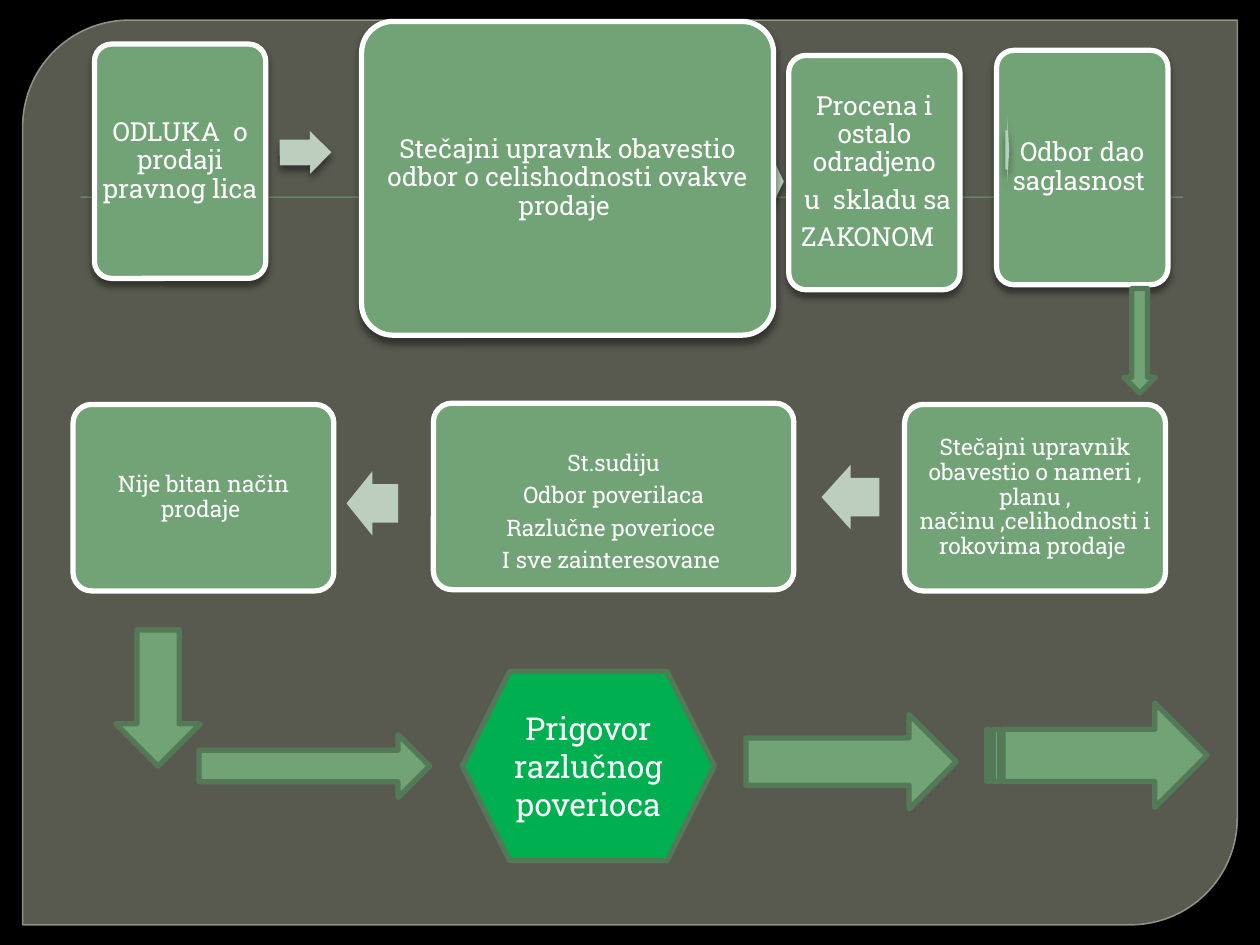
from dataclasses import dataclass

from lxml.etree import SubElement
from pptx import Presentation
from pptx.dml.color import RGBColor
from pptx.enum.shapes import MSO_SHAPE
from pptx.enum.text import MSO_ANCHOR, PP_ALIGN
from pptx.oxml.ns import qn
from pptx.util import Inches, Pt

BLACK = RGBColor(0x00, 0x00, 0x00)
WHITE = RGBColor(0xFF, 0xFF, 0xFF)
PANEL = RGBColor(0x88, 0x8B, 0x7B)
PANEL_EDGE = RGBColor(0x9D, 0xA0, 0x90)
SAGE = RGBColor(0x72, 0xA3, 0x76)
PALE_SAGE = RGBColor(0xBC, 0xCE, 0xBD)
DARK_SAGE = RGBColor(0x54, 0x79, 0x57)
BRIGHT_GREEN = RGBColor(0x00, 0xB0, 0x50)
FONT = "Roboto Slab"
CARD_INSET = 0.02


@dataclass
class Box:
    left: float
    top: float
    width: float
    height: float


@dataclass
class Card:
    box: Box
    lines: list[str]
    size: int = 15
    shadow: bool = True
    top_inset: float = CARD_INSET


@dataclass
class SmallArrow:
    box: Box
    rotation: float = 0
    shadow: bool = True


@dataclass
class BlockArrow:
    kind: MSO_SHAPE
    box: Box


def add_shape(s, kind: MSO_SHAPE, box: Box, fill: RGBColor,
              line: RGBColor | None = None, weight: float = 3):
    sp = s.shapes.add_shape(kind, Inches(box.left), Inches(box.top),
                            Inches(box.width), Inches(box.height))
    sp.shadow.inherit = False
    sp.fill.solid()
    sp.fill.fore_color.rgb = fill
    if line is None:
        sp.line.fill.background()
    else:
        sp.line.color.rgb = line
        sp.line.width = Pt(weight)
    return sp


def set_alpha(color, percent: int) -> None:
    SubElement(color, qn("a:alpha"), val=str(percent * 1000))


def add_shadow(sp, blur: float = 4, distance: float = 3, percent: int = 43) -> None:
    effects = sp._element.spPr.find(qn("a:effectLst"))
    shadow = SubElement(effects, qn("a:outerShdw"), blurRad=str(Pt(blur)),
                        dist=str(Pt(distance)), dir="5400000", rotWithShape="0")
    set_alpha(SubElement(shadow, qn("a:srgbClr"), val=str(BLACK)), percent)


def write_text(sp, lines: list[str], size: int):
    tf = sp.text_frame
    tf.word_wrap = True
    tf.vertical_anchor = MSO_ANCHOR.MIDDLE
    for i, line in enumerate(lines):
        p = tf.paragraphs[0] if i == 0 else tf.add_paragraph()
        p.alignment = PP_ALIGN.CENTER
        r = p.add_run()
        r.text = line
        r.font.name = FONT
        r.font.size = Pt(size)
        r.font.color.rgb = WHITE
    return tf


def draw_card(s, card: Card) -> None:
    sp = add_shape(s, MSO_SHAPE.ROUNDED_RECTANGLE, card.box, SAGE, WHITE)
    sp.adjustments[0] = 0.1
    if card.shadow:
        add_shadow(sp)
    tf = write_text(sp, card.lines, card.size)
    tf.margin_left = tf.margin_right = tf.margin_bottom = Inches(CARD_INSET)
    tf.margin_top = Inches(card.top_inset)
    for p in tf.paragraphs:
        p.line_spacing = 0.9
        p.space_after = Pt(round(card.size * 0.35, 1))


def draw_small_arrow(s, arrow: SmallArrow) -> None:
    sp = add_shape(s, MSO_SHAPE.RIGHT_ARROW, arrow.box, PALE_SAGE)
    sp.adjustments[0] = 0.6
    sp.adjustments[1] = 0.5
    sp.rotation = arrow.rotation
    if arrow.shadow:
        add_shadow(sp)


def draw_background(s) -> None:
    s.background.fill.solid()
    s.background.fill.fore_color.rgb = BLACK
    panel = add_shape(s, MSO_SHAPE.ROUND_2_DIAG_RECTANGLE,
                      Box(0.18, 0.16, 9.64, 7.18), PANEL, PANEL_EDGE, 0.87)
    panel.adjustments[0] = 0.118
    panel.adjustments[1] = 0
    fill_color, line_color = panel._element.spPr.iter(qn("a:srgbClr"))
    set_alpha(fill_color, 65)
    set_alpha(line_color, 88)
    rule = add_shape(s, MSO_SHAPE.RECTANGLE, Box(0.64, 1.56, 8.75, 0.01), SAGE)
    add_shadow(rule, 1, 1, 75)


FLOW = [
    Card(Box(7.91, 0.4, 1.36, 1.86), ["Odbor dao saglasnost "]),
    SmallArrow(Box(7.98, 0.93, 0.03, 0.52)),
    Card(Box(6.26, 0.44, 1.36, 1.86),
         ["Procena i ostalo odradjeno", " u  skladu sa ", "ZAKONOM  "]),
    SmallArrow(Box(6.03, 1.24, 0.19, 0.4)),
    Card(Box(0.75, 0.35, 1.36, 1.86), ["ODLUKA  o prodaji pravnog lica "]),
    SmallArrow(Box(2.22, 1.04, 0.41, 0.34), 359.6),
    Card(Box(2.87, 0.17, 3.27, 2.49),
         ["Stečajni upravnk obavestio odbor o celishodnosti ovakve prodaje "]),
    Card(Box(0.58, 3.21, 2.07, 1.48), ["Nije bitan način prodaje "], 13, False),
    SmallArrow(Box(2.75, 3.74, 0.41, 0.51), 180, False),
    Card(Box(3.44, 3.2, 2.86, 1.48),
         ["St.sudiju", "Odbor poverilaca", "Razlučne poverioce ",
          "I sve zainteresovane "], 13, False, 0.28),
    SmallArrow(Box(6.52, 3.69, 0.46, 0.51), 180, False),
    Card(Box(7.18, 3.21, 2.07, 1.48),
         ["Stečajni upravnik obavestio o nameri , planu , "
          "načinu ,celihodnosti i rokovima prodaje "], 13, False),
]

BLOCK_ARROWS = [
    BlockArrow(MSO_SHAPE.DOWN_ARROW, Box(0.92, 5, 0.67, 1.08)),
    BlockArrow(MSO_SHAPE.RIGHT_ARROW, Box(1.58, 5.83, 1.83, 0.5)),
    BlockArrow(MSO_SHAPE.RIGHT_ARROW, Box(5.92, 5.67, 1.67, 0.75)),
    BlockArrow(MSO_SHAPE.STRIPED_RIGHT_ARROW, Box(7.83, 5.58, 1.75, 0.83)),
    BlockArrow(MSO_SHAPE.DOWN_ARROW, Box(8.92, 2.29, 0.25, 0.83)),
]


def main() -> None:
    prs = Presentation()
    prs.slide_width = Inches(10)
    prs.slide_height = Inches(7.5)
    s = prs.slides.add_slide(prs.slide_layouts[6])
    draw_background(s)
    for item in FLOW:
        if isinstance(item, Card):
            draw_card(s, item)
        else:
            draw_small_arrow(s, item)
    objection = add_shape(s, MSO_SHAPE.HEXAGON, Box(3.67, 5.33, 2, 1.5),
                          BRIGHT_GREEN, DARK_SAGE)
    write_text(objection, ["Prigovor razlučnog poverioca"], 18)
    for arrow in BLOCK_ARROWS:
        add_shape(s, arrow.kind, arrow.box, SAGE, DARK_SAGE)
    prs.save("out.pptx")


if __name__ == "__main__":
    main()
